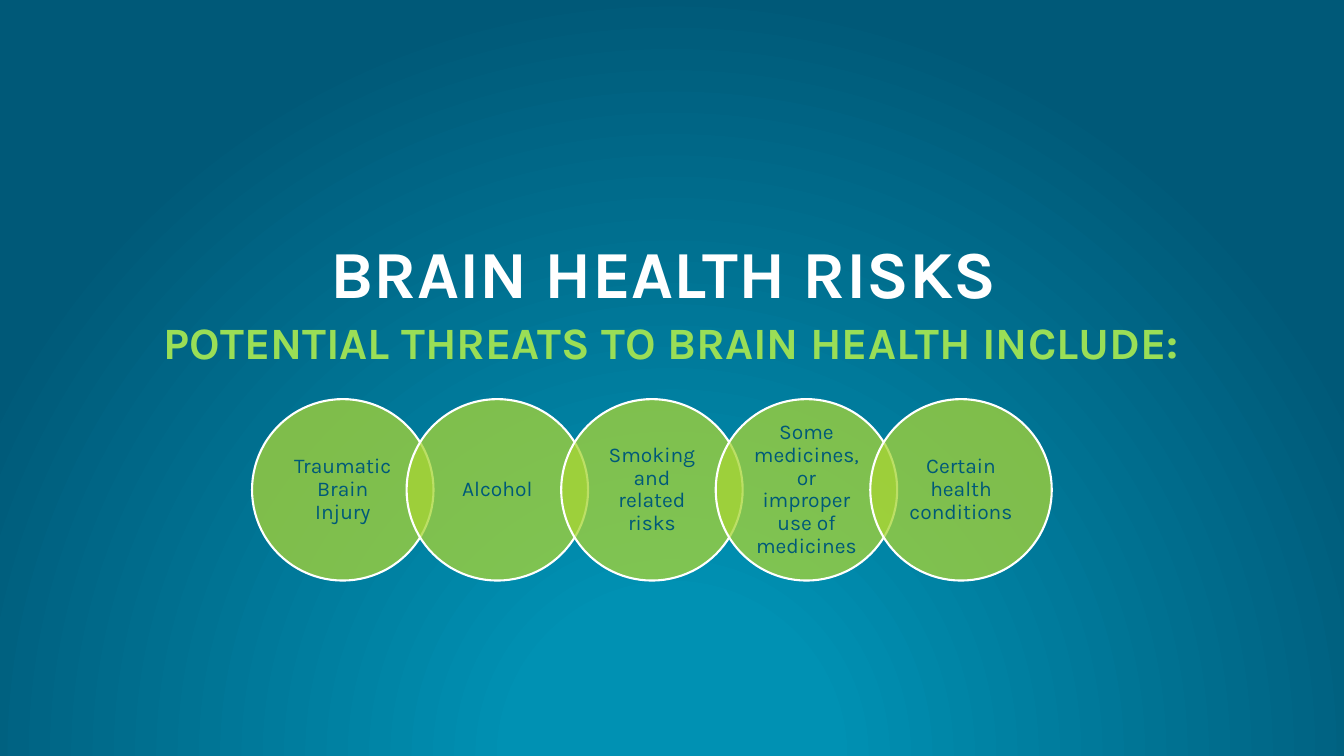
from lxml import etree
from pptx import Presentation
from pptx.dml.color import RGBColor
from pptx.enum.shapes import MSO_SHAPE
from pptx.enum.text import MSO_ANCHOR, MSO_AUTO_SIZE, PP_ALIGN
from pptx.oxml import parse_xml
from pptx.oxml.ns import qn
from pptx.util import Inches, Pt

OVAL = MSO_SHAPE.OVAL
TOP, MIDDLE, BOTTOM = MSO_ANCHOR.TOP, MSO_ANCHOR.MIDDLE, MSO_ANCHOR.BOTTOM
CENTER = PP_ALIGN.CENTER
FIXED = MSO_AUTO_SIZE.NONE

WHITE = RGBColor(0xFF, 0xFF, 0xFF)
LIME = RGBColor(0x9A, 0xDE, 0x56)
GREEN = RGBColor(0xA7, 0xD5, 0x35)
NAVY = RGBColor(0x00, 0x59, 0x78)
AQUA = RGBColor(0x00, 0x91, 0xB3)

WIDTH = 13.33
LEFT, UPPER, SIZE, STEP = 2.5, 3.96, 1.8, 1.533
RISKS = [
    "Traumatic Brain Injury",
    "Alcohol",
    "Smoking and related risks",
    "Some medicines, or improper use of medicines",
    "Certain health conditions",
]


def apply(target, values):
    """Set each named attribute on the target."""
    for name, value in values.items():
        setattr(target, name, value)


def write(shape, text, anchor, spacing, look, margins=(0.1, 0.05)):
    """Fill a shape with one centred paragraph."""
    side, edge = (Inches(gap) for gap in margins)
    frame = shape.text_frame
    apply(frame, {
        "word_wrap": True, "auto_size": FIXED, "vertical_anchor": anchor,
        "margin_left": side, "margin_right": side,
        "margin_top": edge, "margin_bottom": edge,
    })
    para = frame.paragraphs[0]
    apply(para, {"alignment": CENTER, "line_spacing": spacing,
                 "space_before": Pt(0)})
    run = para.add_run()
    run.text = text
    apply(run.font, {"name": "Karla", "size": Pt(look["size"]),
                     "bold": look["bold"]})
    run.font.color.rgb = look["color"]


def paint(slide):
    """Give the slide a radial gradient centred below its middle."""
    slide.background.fill.gradient()
    old = next(slide.element.iter(qn("a:gradFill")))
    stops = "".join(
        f'<a:gs pos="{pos * 1000}"><a:srgbClr val="{color}"/></a:gs>'
        for pos, color in [(0, AQUA), (20, AQUA), (100, NAVY)])
    new = parse_xml(
        '<a:gradFill xmlns:a="http://schemas.openxmlformats.org/drawingml/'
        f'2006/main" rotWithShape="1"><a:gsLst>{stops}</a:gsLst>'
        '<a:path path="circle"><a:fillToRect l="50000" t="130000" '
        'r="50000" b="-30000"/></a:path></a:gradFill>')
    old.getparent().replace(old, new)


def add_title(slide, text):
    """Place and format the slide title."""
    title = slide.shapes.title
    apply(title, {"left": 0, "top": Inches(2.38),
                  "width": Inches(WIDTH), "height": Inches(0.78)})
    write(title, text, BOTTOM, 0.9,
          {"size": 48, "bold": True, "color": WHITE})


def add_lead(slide, text):
    """Add the line that leads into the circles."""
    box = slide.shapes.add_textbox(
        0, Inches(3.22), Inches(WIDTH), Inches(0.85))
    write(box, text, TOP, Pt(27.8),
          {"size": 32, "bold": True, "color": LIME})


def add_risk(slide, index, text):
    """Add one translucent circle to the chain."""
    disc = slide.shapes.add_shape(
        OVAL, Inches(LEFT + index * STEP), Inches(UPPER),
        Inches(SIZE), Inches(SIZE))
    disc.shadow.inherit = False
    disc.fill.solid()
    disc.fill.fore_color.rgb = GREEN
    tint = next(disc.element.spPr.iter(qn("a:srgbClr")))
    etree.SubElement(tint, qn("a:alpha")).set("val", "76000")
    disc.line.color.rgb = WHITE
    disc.line.width = Pt(1.5)
    write(disc, text, MIDDLE, 0.9,
          {"size": 15, "bold": False, "color": NAVY}, (0.1, 0.02))


def main():
    """Build and save the slide."""
    deck = Presentation()
    apply(deck, {"slide_width": Inches(WIDTH), "slide_height": Inches(7.5)})
    slide = deck.slides.add_slide(deck.slide_layouts[5])
    paint(slide)
    add_title(slide, "BRAIN HEALTH RISKS ")
    add_lead(slide, "POTENTIAL THREATS TO BRAIN HEALTH INCLUDE:")
    for index, text in enumerate(RISKS):
        add_risk(slide, index, text)
    deck.save("out.pptx")


if __name__ == "__main__":
    main()
